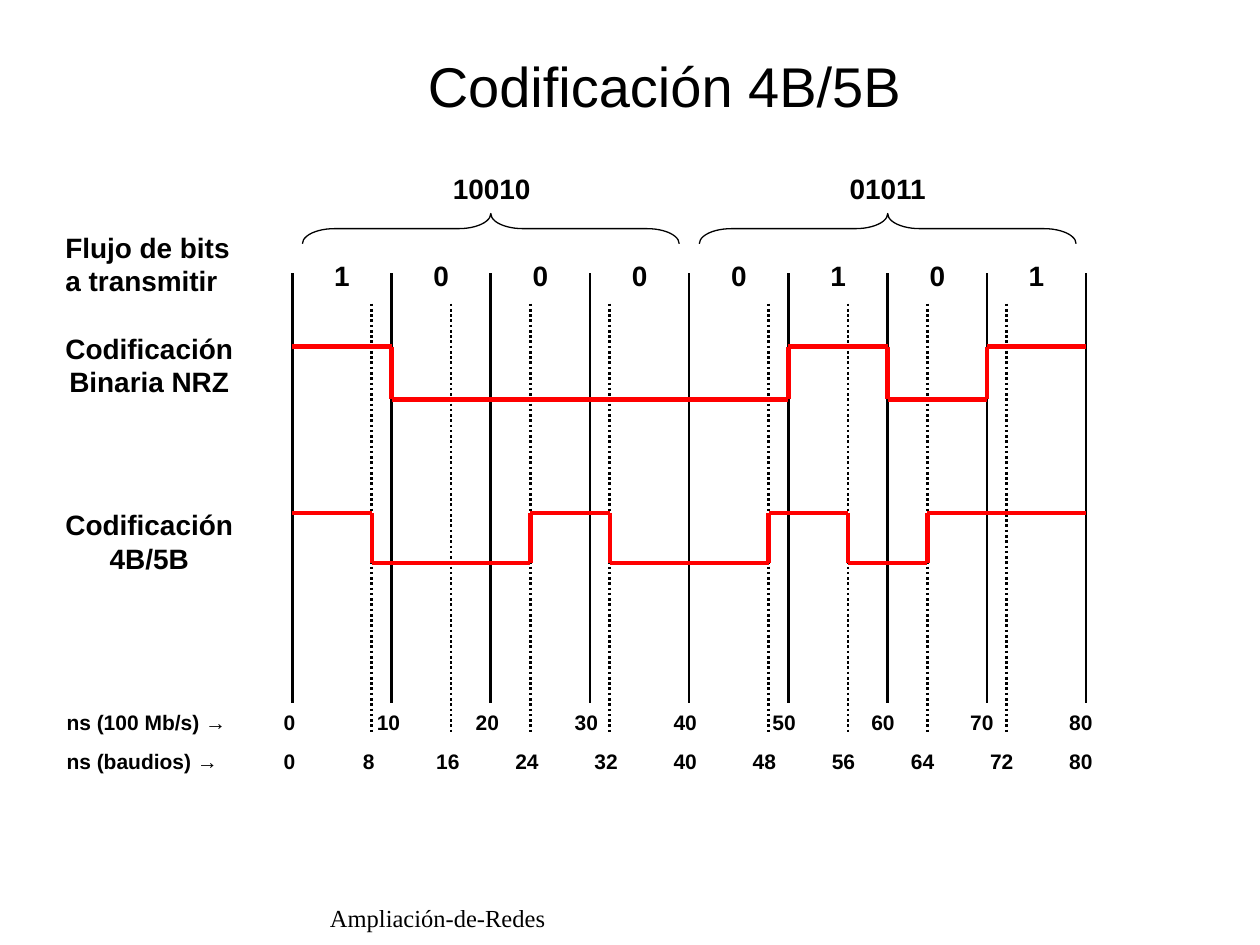
"""Build a slide comparing NRZ and 4B/5B line coding on a shared time axis."""
import itertools
from dataclasses import dataclass

import pptx
import pptx.dml.color
import pptx.enum.dml
import pptx.enum.shapes
import pptx.enum.text
import pptx.oxml.ns
import pptx.util
from lxml import etree

COLORS = {"ink": "000000", "signal": "FF0000"}
WIDTH, HEIGHT = 10, 7.5
CELL = WIDTH / 100
START, PER_NS = 23.2, 0.7875
LABEL_START, LABEL_PER_NS = 23, 0.785
ALIGN = pptx.enum.text.PP_ALIGN
DOTTED = pptx.enum.dml.MSO_LINE.ROUND_DOT


@dataclass(frozen=True)
class Box:
    """Frame in grid columns and rows."""
    col: float
    row: float
    cols: float
    rows: float

    def frame(self) -> list:
        return [grid(n) for n in (self.col, self.row, self.cols, self.rows)]


@dataclass(frozen=True)
class Wave:
    """Signal with its bits, bit time and the rows of both levels."""
    bits: str
    ns: int
    high: float
    low: float


@dataclass(frozen=True)
class Scale:
    """Row of time labels below the diagram."""
    text: str
    row: float
    step: int


CODES = {20: "10010", 60: "01011"}
DATA_BITS = "10000101"
WAVES = [Wave(DATA_BITS, 10, 27.5, 31.7),
         Wave("".join(CODES.values()), 8, 40.7, 44.7)]
SCALES = [Scale("ns (100 Mb/s) →", 55.4, 10), Scale("ns (baudios) →", 58.5, 8)]
LABELS = [
    (["Flujo de bits", "a transmitir"], Box(4.2, 17.8, 15.1, 6.4), ALIGN.LEFT),
    (["Codificación", "Binaria NRZ"], Box(4.2, 25.8, 15.3, 6.4), ALIGN.CENTER),
    (["Codificación", "4B/5B"], Box(4.2, 39.8, 15.3, 6.4), ALIGN.CENTER),
]


def grid(n: float) -> int:
    """Convert grid cells to a length."""
    return pptx.util.Inches(n * CELL)


def time_col(ns: float) -> float:
    """Return the grid column of a moment in nanoseconds."""
    return START + ns * PER_NS


def rgb(name: str):
    """Return a named colour."""
    return pptx.dml.color.RGBColor.from_string(COLORS[name])


def write(tf, lines: list, *, size: float = 16, font: str = "Arial",
          bold: bool = True, align=ALIGN.LEFT, wrap: bool = False, spacing=None):
    """Fill a text frame with formatted paragraphs."""
    tf.word_wrap = wrap
    for i, line in enumerate(lines):
        p = tf.add_paragraph() if i else tf.paragraphs[0]
        p.alignment = align
        p.line_spacing = spacing
        r = p.add_run()
        r.text = line
        r.font.size = pptx.util.Pt(size)
        r.font.name = font
        r.font.bold = bold
        r.font.color.rgb = rgb("ink")


def add_text(shapes, lines: list, box: Box, **style):
    """Add a text box and return its frame."""
    tf = shapes.add_textbox(*box.frame()).text_frame
    write(tf, lines, **style)
    return tf


def add_line(shapes, x1: float, y1: float, x2: float, y2: float, *,
             color: str = "ink", width: float = 1.5, dash=None) -> None:
    """Draw a straight line between two grid points."""
    s = shapes.add_connector(pptx.enum.shapes.MSO_CONNECTOR.STRAIGHT,
                             *(grid(n) for n in (x1, y1, x2, y2)))
    s.line.color.rgb = rgb(color)
    s.line.width = pptx.util.Pt(width)
    if dash:
        s.line.dash_style = dash
    etree.SubElement(s._element.spPr, pptx.oxml.ns.qn("a:effectLst"))


def add_wave(shapes, wave: Wave) -> None:
    """Draw a signal as grouped level and edge lines."""
    group = shapes.add_group_shape().shapes
    style = {"color": "signal", "width": 2.5}
    ns = 0
    for bit, run in itertools.groupby(wave.bits):
        if ns:
            add_line(group, time_col(ns), wave.high, time_col(ns), wave.low, **style)
        end = ns + len(list(run)) * wave.ns
        row = wave.high if bit == "1" else wave.low
        add_line(group, time_col(ns), row, time_col(end), row, **style)
        ns = end


def add_brace(shapes, ns: int) -> None:
    """Draw a brace over the four bits centred on a moment."""
    box = Box(time_col(ns) - 1.2, 3.2, 2.4, 29.9)
    s = shapes.add_shape(pptx.enum.shapes.MSO_SHAPE.LEFT_BRACE, *box.frame())
    s.rotation = 90
    s.adjustments[0] = 1.06
    s.shadow.inherit = False
    s.fill.background()
    s.line.color.rgb = rgb("ink")
    s.line.width = pptx.util.Pt(0.75)


def add_scale(shapes, scale: Scale) -> None:
    """Write a time scale on centred tab stops."""
    times = range(0, 81, scale.step)
    line = "\t".join([scale.text, *map(str, times)])
    tf = add_text(shapes, [line], Box(4.3, scale.row, 84.4, 3.4),
                  size=12, wrap=True, spacing=1.2)
    pPr = tf.paragraphs[0]._p.get_or_add_pPr()
    tabs = etree.SubElement(pPr, pptx.oxml.ns.qn("a:tabLst"))
    for ns in times:
        pos = grid(LABEL_START + ns * LABEL_PER_NS - 5.3)
        etree.SubElement(tabs, pptx.oxml.ns.qn("a:tab"), pos=str(int(pos)), algn="ctr")


def main() -> None:
    """Build and save the slide."""
    prs = pptx.Presentation()
    prs.slide_width = pptx.util.Inches(WIDTH)
    prs.slide_height = pptx.util.Inches(HEIGHT)
    shapes = prs.slides.add_slide(prs.slide_layouts[5]).shapes

    title = shapes.title
    title.left, title.top, title.width, title.height = Box(24, 3.6, 57.5, 6.3).frame()
    write(title.text_frame, ["Codificación 4B/5B"], size=32, bold=False,
          align=ALIGN.CENTER, wrap=True)

    for ns in range(8, 80, 8):
        if ns % 10:
            add_line(shapes, time_col(ns), 24.1, time_col(ns), 58.3, dash=DOTTED)
    for ns in range(0, 81, 10):
        add_line(shapes, time_col(ns), 21.7, time_col(ns), 55.8)
    for i, bit in enumerate(DATA_BITS):
        add_text(shapes, [bit], Box(time_col(10 * i + 5) - 1.6, 20, 3.2, 3.7),
                 align=ALIGN.CENTER)
    for wave in WAVES:
        add_wave(shapes, wave)
    for lines, box, align in LABELS:
        add_text(shapes, lines, box, align=align)
    for ns, code in CODES.items():
        add_brace(shapes, ns)
        add_text(shapes, [code], Box(time_col(ns) - 4, 13.1, 8.2, 3.7))
    for scale in SCALES:
        add_scale(shapes, scale)
    add_text(shapes, ["Ampliación-de-Redes"], Box(25.2, 71.2, 19.3, 3.4),
             size=14, font="Times New Roman", bold=False)
    prs.save("out.pptx")


if __name__ == "__main__":
    main()
